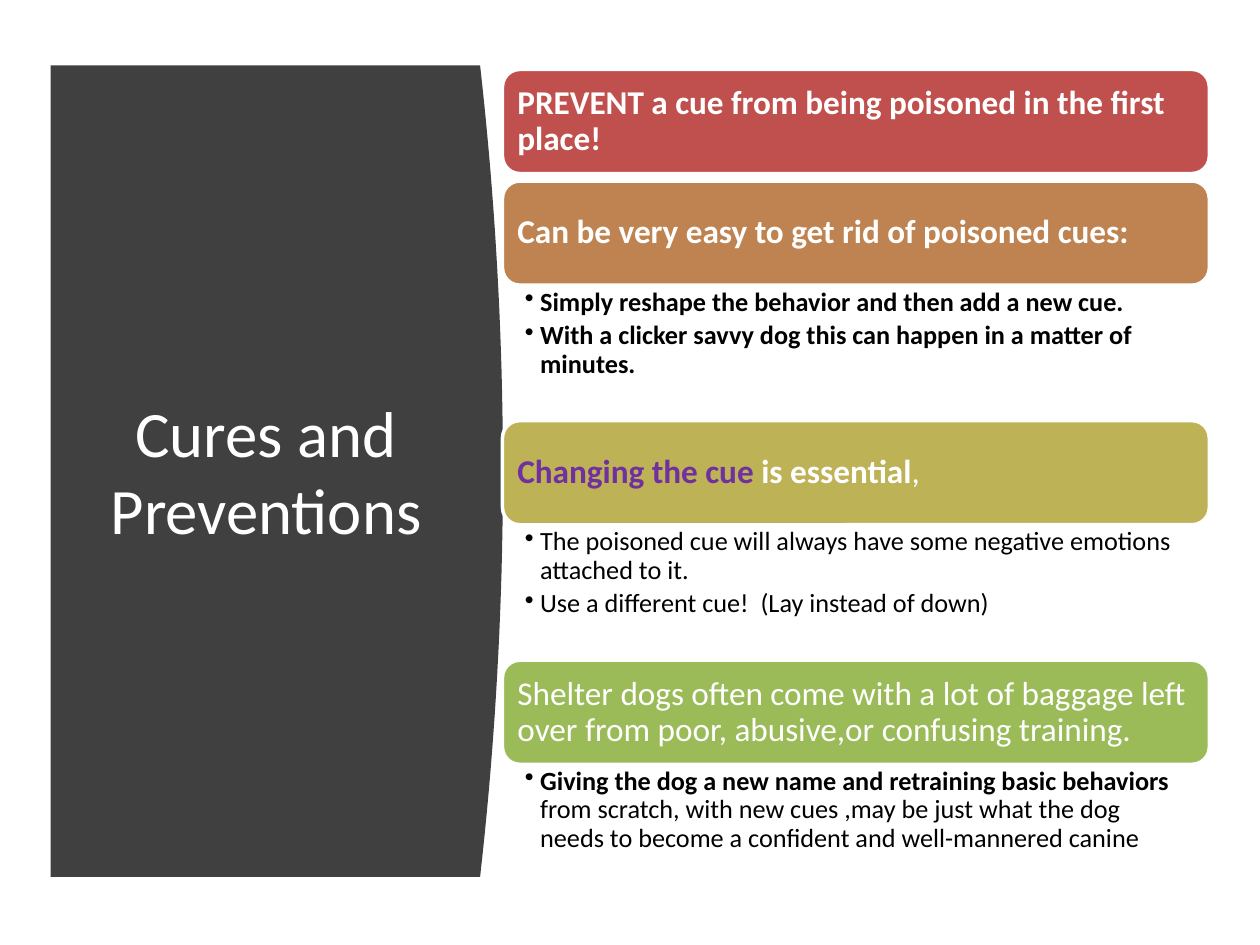
from lxml import etree
from pptx import Presentation
from pptx.dml.color import RGBColor
from pptx.enum.shapes import MSO_SHAPE
from pptx.enum.text import MSO_ANCHOR, PP_ALIGN
from pptx.oxml.ns import qn
from pptx.util import Cm, Pt

ROUND_RECT = MSO_SHAPE.ROUNDED_RECTANGLE
MIDDLE, TOP = MSO_ANCHOR.MIDDLE, MSO_ANCHOR.TOP
LEFT, CENTER = PP_ALIGN.LEFT, PP_ALIGN.CENTER

WHITE = RGBColor(0xFF, 0xFF, 0xFF)
BLACK = RGBColor(0x00, 0x00, 0x00)
CHARCOAL = RGBColor(0x40, 0x40, 0x40)
PURPLE = RGBColor(0x70, 0x30, 0xA0)
RED = RGBColor(0xC0, 0x50, 0x4D)
ORANGE = RGBColor(0xBE, 0x83, 0x51)
OLIVE = RGBColor(0xBD, 0xB2, 0x55)
GREEN = RGBColor(0x9B, 0xBB, 0x59)

FONT = "Calibri"
BAR_H, BAR_GAP, BODY_H = 2.1, 0.15, 2.73
CURVE_STEPS = 40

# Each section: bar colour, heading runs, bullets; a run is (text, bold, colour)
SECTIONS = [
    (RED, [("PREVENT a cue from being poisoned in the first place!", True, WHITE)], []),
    (ORANGE, [("Can be very easy to get rid of poisoned cues:", True, WHITE)], [
        [("Simply reshape the behavior and then add a new cue.", True, BLACK)],
        [("With a clicker savvy dog this can happen in a matter of minutes.", True, BLACK)],
    ]),
    (OLIVE, [("Changing the cue ", True, PURPLE), ("is essential", True, WHITE),
             (",", False, WHITE)], [
        [("The poisoned cue will always have some negative emotions attached to it.",
          False, BLACK)],
        [("Use a different cue!  (Lay instead of down)", False, BLACK)],
    ]),
    (GREEN, [("Shelter dogs often come with a lot of baggage left over from poor, "
              "abusive,or confusing training.", False, WHITE)], [
        [("Giving the dog a new name and retraining basic behaviors ", True, BLACK),
         ("from scratch, with new cues ,may be just what the dog needs to become a "
          "confident and well-mannered canine", False, BLACK)],
    ]),
]


def set_frame(tf, anchor, left, top, right, bottom):
    tf.word_wrap = True
    tf.vertical_anchor = anchor
    tf.margin_left, tf.margin_top = Cm(left), Cm(top)
    tf.margin_right, tf.margin_bottom = Cm(right), Cm(bottom)


def fill_paragraph(p, runs, size, align=LEFT):
    p.alignment = align
    p.font.name, p.font.size = FONT, Pt(size)
    for text, bold, color in runs:
        r = p.add_run()
        r.text = text
        r.font.bold = bold
        r.font.color.rgb = color


def add_bullet(p, indent):
    pPr = p._p.get_or_add_pPr()
    pPr.set("marL", str(indent))
    pPr.set("indent", str(-indent))
    bullet = etree.Element(qn("a:buChar"), char="•")
    # Bullets come after spacing and before the default run properties
    pPr.find(qn("a:defRPr")).addprevious(bullet)


def add_title_panel(slide, x, y, w, h):
    # Dark panel whose right side bulges as a parabola
    bulge = 0.46
    edge = []
    for i in range(CURVE_STEPS + 1):
        t = 2 * i / CURVE_STEPS - 1
        edge.append((Cm(x + w - bulge * t * t), Cm(y + h * i / CURVE_STEPS)))
    builder = slide.shapes.build_freeform(Cm(x), Cm(y))
    builder.add_line_segments(edge + [(Cm(x), Cm(y + h))], close=True)
    panel = builder.convert_to_shape()
    panel.shadow.inherit = False
    panel.fill.solid()
    panel.fill.fore_color.rgb = CHARCOAL
    panel.line.fill.background()

    # Title
    s = slide.shapes.add_textbox(Cm(x + 0.79), Cm(y + 1.5), Cm(w - 2.01), Cm(h - 3.05))
    set_frame(s.text_frame, MIDDLE, 0.25, 0.13, 0.25, 0.13)
    fill_paragraph(s.text_frame.paragraphs[0],
                   [("Cures and Preventions", False, WHITE)], 37, CENTER)


def add_bar(slide, x, y, w, h, color, runs):
    s = slide.shapes.add_shape(ROUND_RECT, Cm(x), Cm(y), Cm(w), Cm(h))
    s.shadow.inherit = False
    s.fill.solid()
    s.fill.fore_color.rgb = color
    s.line.color.rgb = WHITE
    s.line.width = Pt(2)
    set_frame(s.text_frame, MIDDLE, 0.2, 0.2, 0.2, 0.2)
    p = s.text_frame.paragraphs[0]
    p.line_spacing = 0.9
    fill_paragraph(p, runs, 19)


def add_bullets(slide, x, y, w, h, bullets):
    s = slide.shapes.add_textbox(Cm(x), Cm(y), Cm(w), Cm(h))
    tf = s.text_frame
    set_frame(tf, TOP, 0.45, 0.07, 0.38, 0.07)
    for i, runs in enumerate(bullets):
        p = tf.add_paragraph() if i else tf.paragraphs[0]
        p.line_spacing = 0.9
        p.space_after = Pt(3)
        fill_paragraph(p, runs, 15)
        add_bullet(p, Cm(0.31))


def add_sections(slide, x, y, w, h):
    bottom = y + h
    for color, heading, bullets in SECTIONS:
        add_bar(slide, x, y, w, BAR_H, color, heading)
        y += BAR_H
        if bullets:
            body_h = min(BODY_H, bottom - y)
            add_bullets(slide, x, y, w, body_h, bullets)
            y += body_h
        else:
            y += BAR_GAP


def main():
    prs = Presentation()
    prs.slide_width, prs.slide_height = Cm(25.4), Cm(19.05)
    slide = prs.slides.add_slide(prs.slide_layouts[6])
    add_title_panel(slide, 1.02, 1.32, 9.12, 16.36)
    add_sections(slide, 10.13, 1.4, 14.25, 15.92)
    prs.save("out.pptx")


if __name__ == "__main__":
    main()
